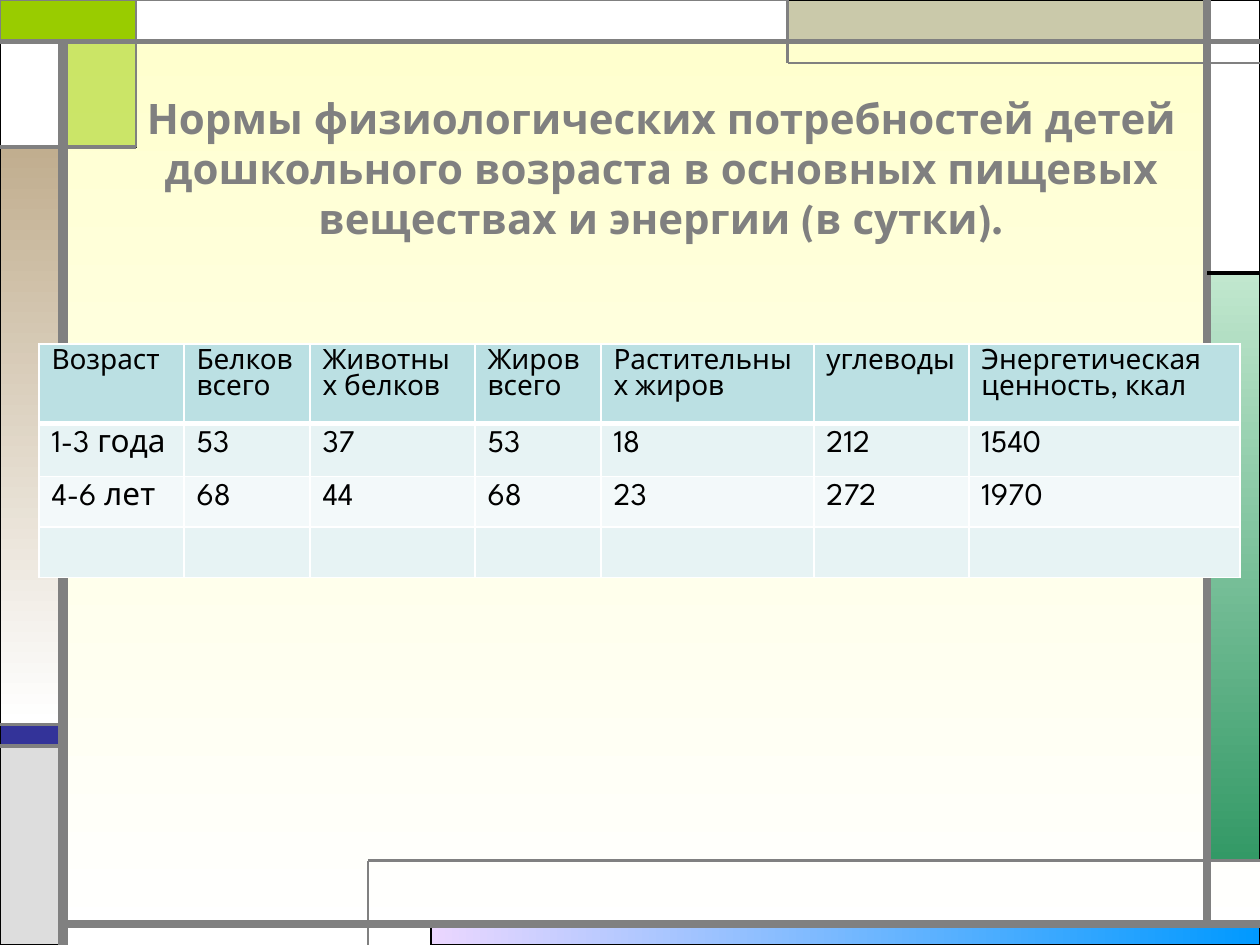
from dataclasses import dataclass

from lxml import etree
from pptx import Presentation
from pptx import util as u
from pptx.dml import color
from pptx.enum import shapes, text
from pptx.oxml import ns


@dataclass(frozen=True)
class Theme:
    font: str = "League Spartan"
    gray: str = "808080"
    black: str = "000000"
    white: str = "FFFFFF"
    cream: str = "FFFFCC"
    green: str = "99CC00"
    blue: str = "333399"
    silver: str = "DDDDDD"
    khaki: str = "CAC9AA"
    header: str = "BBE0E3"
    bands: tuple = ("E7F3F4", "F3F9FA")
    rainbow: tuple = ("EBD7FF", "0099FF")
    emerald: tuple = ("C1E7CE", "339966")
    sand: tuple = ("C1AE8F", "FFFFFF")
    title_size: int = 24
    title_pitch: float = 28.6
    header_size: int = 16
    body_size: int = 18


THEME = Theme()
DOWN, ACROSS = 270, 0
LEFT, TAB, RIGHT, EDGE = 0.5, 1.08, 9.58, 10
TOP, CORNER, PANEL, BOTTOM = 0.33, 1.17, 6.25, 7.33
STRIPE, STRIPE_END, SHELF, SIDE = 5.75, 5.92, 6.83, 2.17

HEADERS = ["Возраст", "Белков всего", "Животных белков", "Жиров всего",
           "Растительных жиров", "углеводы", "Энергетическая ценность, ккал"]
NORMS = [
    ["1-3 года", "53", "37", "53", "18", "212", "1540"],
    ["4-6 лет", "68", "44", "68", "23", "272", "1970"],
    [""] * len(HEADERS),
]
COLUMN_WIDTHS = [1.15, 1, 1.31, 1, 1.69, 1.23, 2.15]
ROW_HEIGHTS = [0.5, 0.42, 0.33, 0.33]


def rgb(value):
    return color.RGBColor.from_string(value)


def apply_format(target, values):
    for name, value in values.items():
        setattr(target, name, value)


def paint_gradient(fill, stops, angle):
    fill.gradient()
    fill.gradient_angle = angle
    for stop, (position, value) in zip(fill.gradient_stops, enumerate(stops)):
        stop.position = position
        stop.color.rgb = rgb(value)


def paint_solid(fill, value):
    fill.solid()
    fill.fore_color.rgb = rgb(value)


def style_run(run, size, value, bold=False):
    apply_format(run.font, {"name": THEME.font, "size": u.Pt(size), "bold": bold})
    run.font.color.rgb = rgb(value)


def add_panel(slide, box, edges, paint, angle=DOWN, line=THEME.black, weight=0.75):
    left, top, right, bottom = edges
    shape = slide.shapes.add_shape(
        shapes.MSO_SHAPE.RECTANGLE, u.Inches(box[0] + left), u.Inches(box[1] + top),
        u.Inches(right - left), u.Inches(bottom - top))
    shape.shadow.inherit = False
    if isinstance(paint, tuple):
        paint_gradient(shape.fill, paint, angle)
    else:
        paint_solid(shape.fill, paint)
    shape.line.color.rgb = rgb(line)
    shape.line.width = u.Pt(weight)
    return shape


def add_rule(slide, box, ends, weight, value=THEME.gray):
    x1, y1, x2, y2 = ends
    connector = slide.shapes.add_connector(
        shapes.MSO_CONNECTOR.STRAIGHT, u.Inches(box[0] + x1), u.Inches(box[1] + y1),
        u.Inches(box[0] + x2), u.Inches(box[1] + y2))
    connector.line.color.rgb = rgb(value)
    connector.line.width = u.Pt(weight)
    etree.SubElement(connector._element.spPr, ns.qn("a:effectLst"))


def add_frame(slide, box):
    height = box[3]
    add_panel(slide, box, (3.42, BOTTOM, EDGE, height), THEME.rainbow, ACROSS)
    for edges, paint in [
        ((RIGHT, SIDE, EDGE, SHELF), THEME.emerald),
        ((0, STRIPE, LEFT, STRIPE_END), THEME.blue),
        ((0, STRIPE_END, LEFT, height), THEME.silver),
        ((RIGHT, 0, EDGE, SIDE), THEME.white),
        ((PANEL, 0, RIGHT, TOP), THEME.khaki),
    ]:
        add_panel(slide, box, edges, paint)
    tab = add_panel(slide, box, (LEFT, TOP, TAB, CORNER), THEME.green)
    tint = tab._element.spPr.find(ns.qn("a:solidFill"))[0]
    etree.SubElement(tint, ns.qn("a:alpha"), val="50000")
    add_panel(slide, box, (0, CORNER, LEFT, STRIPE), THEME.sand)
    add_panel(slide, box, (0, TOP, LEFT, CORNER), THEME.white)
    add_panel(slide, box, (0, 0, TAB, TOP), THEME.green, line=THEME.gray, weight=1.5)
    add_panel(slide, box, (TAB, 0, PANEL, TOP), THEME.white, line=THEME.gray)

    for ends, weight in [
        ((LEFT, height, LEFT, TOP), 6),
        ((LEFT, BOTTOM, EDGE, BOTTOM), 4.5),
        ((RIGHT, BOTTOM, RIGHT, 0), 4.5),
        ((0, TOP, EDGE, TOP), 3),
        ((EDGE, 0.5, PANEL, 0.5), 1.5),
        ((PANEL, 0.5, PANEL, 0), 1.5),
        ((TAB, 0, TAB, CORNER), 1.5),
        ((TAB, CORNER, 0, CORNER), 2.25),
        ((2.92, height, 2.92, SHELF), 1.5),
        ((2.92, SHELF, EDGE, SHELF), 1.5),
        ((LEFT, STRIPE, 0, STRIPE), 2.25),
        ((LEFT, STRIPE_END, 0, STRIPE_END), 2.25),
    ]:
        add_rule(slide, box, ends, weight)
    add_rule(slide, box, (RIGHT, SIDE, EDGE, SIDE), 2.25, THEME.black)


def add_title(slide, box, wording):
    frame = slide.shapes.add_textbox(*map(u.Inches, box)).text_frame
    apply_format(frame, {"word_wrap": True, "vertical_anchor": text.MSO_ANCHOR.MIDDLE})
    paragraph = frame.paragraphs[0]
    apply_format(paragraph, {"alignment": text.PP_ALIGN.CENTER,
                             "line_spacing": u.Pt(THEME.title_pitch)})
    run = paragraph.add_run()
    run.text = wording
    style_run(run, THEME.title_size, THEME.gray, True)


def add_cell_borders(cell, weights):
    properties = cell._tc.get_or_add_tcPr()
    for side, weight in weights.items():
        line = etree.SubElement(properties, ns.qn(f"a:ln{side}"), w=str(u.Pt(weight)))
        fill = etree.SubElement(line, ns.qn("a:solidFill"))
        etree.SubElement(fill, ns.qn("a:srgbClr"), val=THEME.white)


def add_norms_table(slide, box):
    rows = [HEADERS] + NORMS
    table = slide.shapes.add_table(len(rows), len(HEADERS), *map(u.Inches, box)).table
    apply_format(table, {"first_row": False, "horz_banding": False})
    for column, width in zip(table.columns, COLUMN_WIDTHS):
        column.width = u.Inches(width)
    for index, (row, height, values) in enumerate(zip(table.rows, ROW_HEIGHTS, rows)):
        row.height = u.Inches(height)
        is_header = index == 0
        paint = THEME.header if is_header else THEME.bands[(index - 1) % 2]
        weights = {"L": 1, "R": 1, "T": 3 if index == 1 else 1, "B": 3 if is_header else 1}
        for cell, value in zip(row.cells, values):
            add_cell_borders(cell, weights)
            paint_solid(cell.fill, paint)
            run = cell.text_frame.paragraphs[0].add_run()
            run.text = value
            style_run(run, THEME.header_size if is_header else THEME.body_size, THEME.black)


def main():
    presentation = Presentation()
    apply_format(presentation, {"slide_width": u.Inches(10), "slide_height": u.Inches(7.5)})
    slide = presentation.slides.add_slide(presentation.slide_layouts[6])
    paint_gradient(slide.background.fill, (THEME.cream, THEME.white), DOWN)
    add_frame(slide, (0, 0, 10, 7.5))
    add_title(slide, (1, 0.43, 8.5, 1.8),
              "Нормы физиологических потребностей детей дошкольного возраста "
              "в основных пищевых веществах и энергии (в сутки).")
    add_norms_table(slide, (0.31, 2.73, sum(COLUMN_WIDTHS), sum(ROW_HEIGHTS)))
    presentation.save("out.pptx")


if __name__ == "__main__":
    main()
